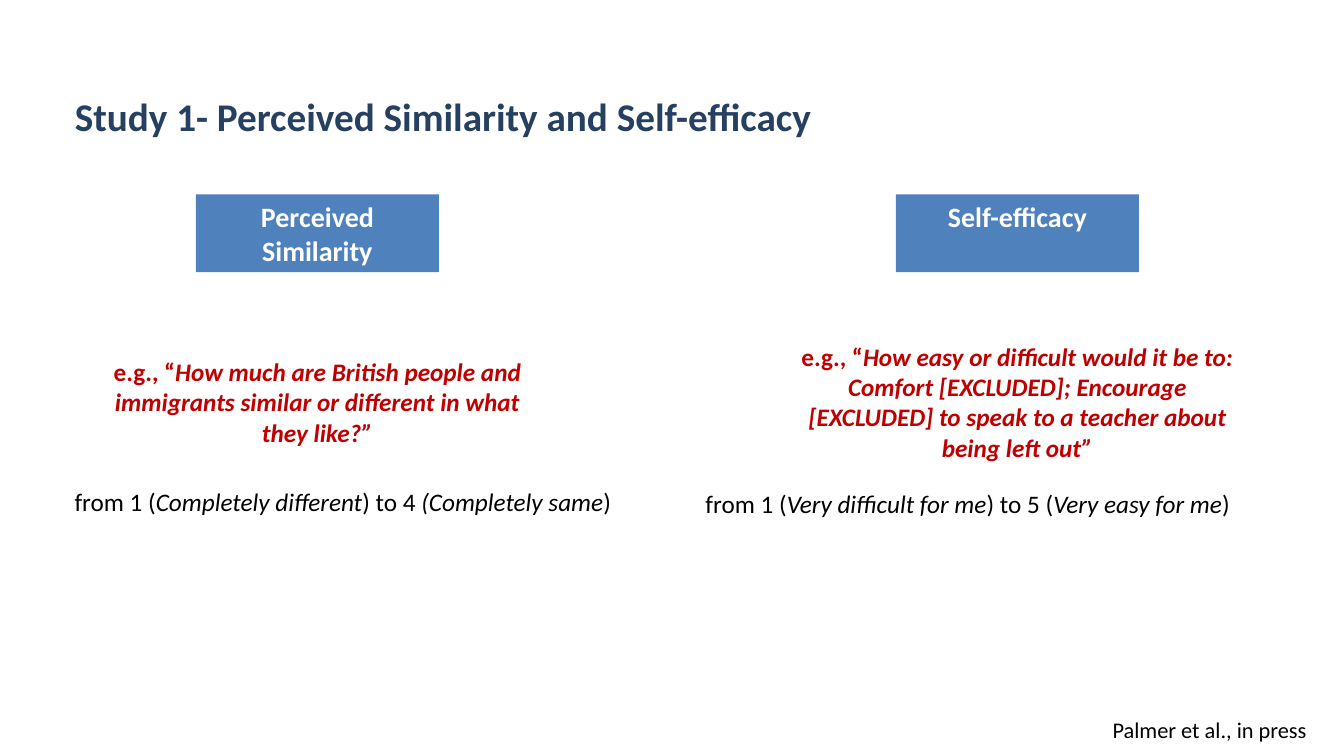
from pptx import Presentation
from pptx.dml.color import RGBColor
from pptx.enum.shapes import MSO_SHAPE
from pptx.enum.text import MSO_ANCHOR, PP_ALIGN
from pptx.util import Cm, Pt

RECTANGLE = MSO_SHAPE.RECTANGLE
TOP, BOTTOM = MSO_ANCHOR.TOP, MSO_ANCHOR.BOTTOM
LEFT, CENTER = PP_ALIGN.LEFT, PP_ALIGN.CENTER

# Content: runs are (text, italic); places are in centimetres
TITLE = "Study 1- Perceived Similarity and Self-efficacy"
CITATION = "Palmer et al., in press"
MEASURES = [
    {
        "name": "Perceived Similarity",
        "center": 8.0,
        "question": [
            ("e.g., “", False),
            ("How much are British people and immigrants similar or different "
             "in what they like?”", True),
        ],
        "question_height": 2.57,
        "scale": [
            ("from 1 (", False), ("Completely different", True),
            (") to 4 ", False), ("(Completely same", True), (")", False),
        ],
        "scale_place": (1.63, 12.12, 14.45, 1.02),
    },
    {
        "name": "Self-efficacy",
        "center": 25.64,
        "question": [
            ("e.g., “", False),
            ("How easy or difficult would it be to: Comfort [EXCLUDED]; "
             "Encourage [EXCLUDED] to speak to a teacher about being left out”",
             True),
        ],
        "question_height": 3.33,
        "scale": [
            ("from 1 (", False), ("Very difficult for me", True),
            (") to 5 (", False), ("Very easy for me", True), (")", False),
        ],
        "scale_place": (17.53, 12.19, 16.3, 1.02),
    },
]

COLORS = {"title": "254061", "header": "4F81BD", "header_text": "FFFFFF",
          "question": "C00000", "text": "000000"}
FONT = "Calibri"
HEADER_TOP, HEADER_WIDTH, HEADER_HEIGHT = 4.9, 6.12, 1.96
QUESTION_MIDDLE, QUESTION_WIDTH = 10.14, 11.46


def write(shape, runs, size, color, bold=False, align=LEFT, anchor=TOP, wrap=True):
    frame = shape.text_frame
    frame.word_wrap = wrap
    frame.vertical_anchor = anchor
    para = frame.paragraphs[0]
    para.alignment = align
    para.font.name = FONT
    para.font.size = Pt(size)
    para.font.bold = bold
    para.font.color.rgb = RGBColor.from_string(COLORS[color])
    for text, italic in runs:
        span = para.add_run()
        span.text = text
        if italic:
            span.font.italic = True


def add_text(page, place, runs, size, color, **options):
    box = page.shapes.add_textbox(*map(Cm, place))
    write(box, runs, size, color, **options)


def add_measure(page, measure):
    center = measure["center"]

    # Header
    header = page.shapes.add_shape(
        RECTANGLE, Cm(center - HEADER_WIDTH / 2), Cm(HEADER_TOP),
        Cm(HEADER_WIDTH), Cm(HEADER_HEIGHT))
    header.shadow.inherit = False
    header.fill.solid()
    header.fill.fore_color.rgb = RGBColor.from_string(COLORS["header"])
    header.line.fill.background()
    write(header, [(measure["name"], False)], 20, "header_text",
          bold=True, align=CENTER)

    # Example question, centred under the header
    height = measure["question_height"]
    place = (center - QUESTION_WIDTH / 2, QUESTION_MIDDLE - height / 2,
             QUESTION_WIDTH, height)
    add_text(page, place, measure["question"], 18, "question",
             bold=True, align=CENTER)

    # Response scale
    add_text(page, measure["scale_place"], measure["scale"], 18, "text")


def main():
    deck = Presentation()
    deck.slide_width, deck.slide_height = Cm(33.87), Cm(19.05)
    page = deck.slides.add_slide(deck.slide_layouts[5])

    # Title
    title = page.shapes.title
    title.left, title.top, title.width, title.height = map(
        Cm, (1.63, 1.96, 30.63, 1.68))
    write(title, [(TITLE, False)], 28, "title", bold=True, anchor=BOTTOM)

    # Measures and citation
    for measure in MEASURES:
        add_measure(page, measure)
    add_text(page, (27.79, 17.93, 5.46, 0.94), [(CITATION, False)], 16, "text",
             wrap=False)

    deck.save("out.pptx")


if __name__ == "__main__":
    main()
